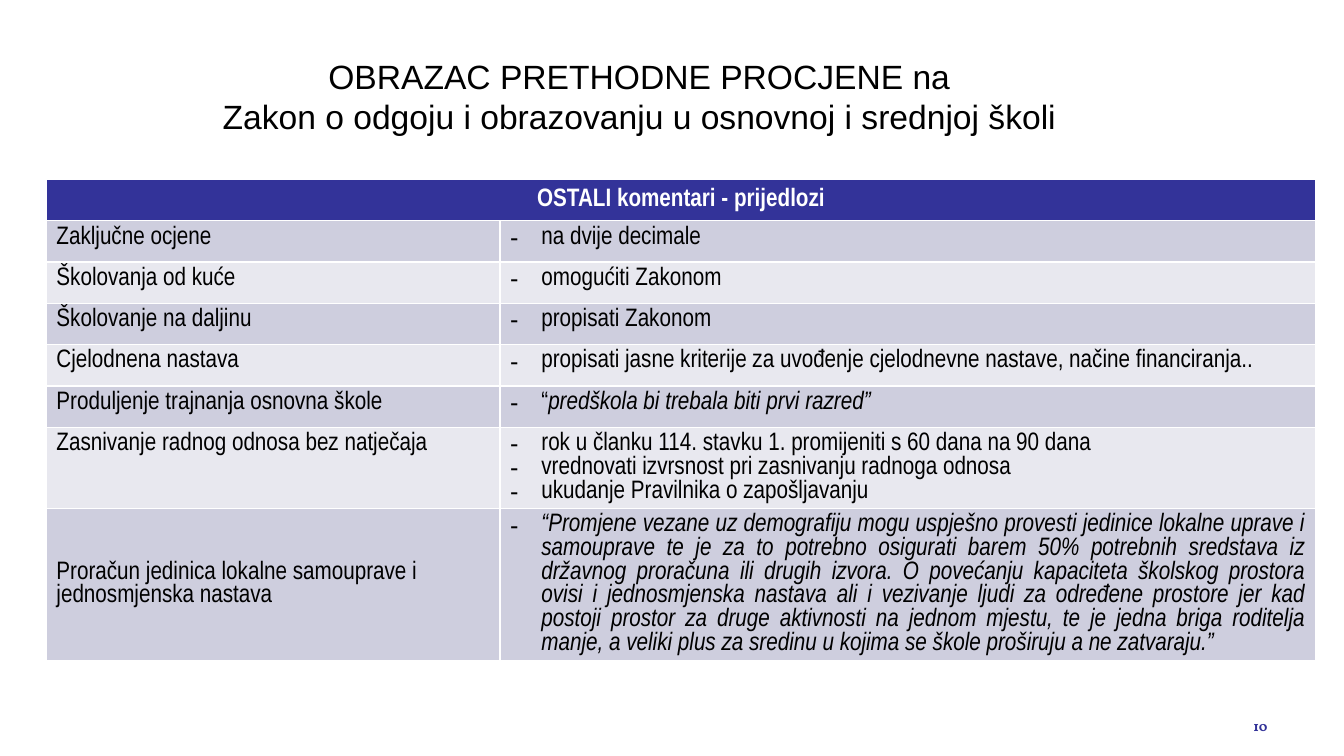
from lxml import etree
from pptx import Presentation
from pptx.dml.color import RGBColor
from pptx.enum import text
from pptx.oxml import ns
from pptx.util import Inches, Pt

BLACK = RGBColor(0x00, 0x00, 0x00)
WHITE = RGBColor(0xFF, 0xFF, 0xFF)
NAVY = RGBColor(0x33, 0x33, 0x99)
BANDS = (RGBColor(0xCE, 0xCE, 0xDE), RGBColor(0xE8, 0xE8, 0xEF))
INDENT = Inches(0.31)
ROW_HEIGHT = Inches(0.41)

TITLE = ("OBRAZAC PRETHODNE PROCJENE na",
         "Zakon o odgoju i obrazovanju u osnovnoj i srednjoj školi")
HEADER = "OSTALI komentari - prijedlozi"
BUDGET_QUOTE = (
    "“Promjene vezane uz demografiju mogu uspješno provesti jedinice lokalne "
    "uprave i samouprave te je za to potrebno osigurati barem 50% potrebnih "
    "sredstava iz državnog proračuna ili drugih izvora. O povećanju kapaciteta "
    "školskog prostora ovisi i jednosmjenska nastava ali i vezivanje ljudi za "
    "određene prostore jer kad postoji prostor za druge aktivnosti na jednom "
    "mjestu, te je jedna briga roditelja manje, a veliki plus za sredinu u "
    "kojima se škole proširuju a ne zatvaraju.”")

# Topic, then its proposals; each proposal is (upright text, italic text)
ROWS = [
    ("Zaključne ocjene", [("na dvije decimale", "")]),
    ("Školovanja od kuće", [("omogućiti Zakonom", "")]),
    ("Školovanje na daljinu", [("propisati Zakonom", "")]),
    ("Cjelodnena nastava",
     [("propisati jasne kriterije za uvođenje cjelodnevne nastave, "
       "načine financiranja..", "")]),
    ("Produljenje trajnanja osnovna škole",
     [("“", "predškola bi trebala biti prvi razred”")]),
    ("Zasnivanje radnog odnosa bez natječaja",
     [("rok u članku 114. stavku 1. promijeniti s 60 dana na 90 dana", ""),
      ("vrednovati izvrsnost pri zasnivanju radnoga odnosa", ""),
      ("ukudanje Pravilnika o zapošljavanju", "")]),
    ("Proračun jedinica lokalne samouprave i jednosmjenska nastava",
     [("", BUDGET_QUOTE)]),
]


def add_run(p, words, size, font, color, bold=False, italic=False):
    r = p.add_run()
    r.text = words
    r.font.size = Pt(size)
    r.font.name = font
    r.font.color.rgb = color
    r.font.bold = bold
    r.font.italic = italic


def add_dash(p):
    pPr = p._p.get_or_add_pPr()
    pPr.set("marL", str(INDENT))
    pPr.set("indent", str(-INDENT))
    etree.SubElement(pPr, ns.qn("a:buFont")).set("typeface", "Arial")
    etree.SubElement(pPr, ns.qn("a:buChar")).set("char", "-")


def fill_cell(cell, fill, items, color=BLACK, bold=False, dashed=False, align=None):
    cell.fill.solid()
    cell.fill.fore_color.rgb = fill
    tf = cell.text_frame
    for i, (upright, slanted) in enumerate(items):
        p = tf.add_paragraph() if i else tf.paragraphs[0]
        p.alignment = align
        if dashed:
            add_dash(p)
        for words, italic in ((upright, False), (slanted, True)):
            if words:
                add_run(p, words, 18, "Arial Narrow", color, bold, italic)


def set_title(s):
    sp = s.shapes.title
    sp.left, sp.top = Inches(0.34), Inches(0.5)
    sp.width, sp.height = Inches(12), Inches(0.87)
    sp.fill.solid()
    sp.fill.fore_color.rgb = WHITE
    tf = sp.text_frame
    tf.auto_size = text.MSO_AUTO_SIZE.NONE
    tf.vertical_anchor = text.MSO_ANCHOR.BOTTOM
    tf.margin_bottom = Inches(0.02)
    p = tf.paragraphs[0]
    p.alignment = text.PP_ALIGN.CENTER
    for i, line in enumerate(TITLE):
        if i:
            p.add_line_break()
        add_run(p, line, 24, "Arial", BLACK)


def add_proposals(s):
    count = len(ROWS) + 1
    table = s.shapes.add_table(count, 2, Inches(0.46), Inches(1.78),
                               Inches(12.59), ROW_HEIGHT * count).table
    table.columns[0].width = Inches(4.5)
    table.columns[1].width = Inches(8.09)
    for row in table.rows:
        row.height = ROW_HEIGHT

    # Header across both columns
    header = table.cell(0, 0)
    header.merge(table.cell(0, 1))
    header.vertical_anchor = text.MSO_ANCHOR.MIDDLE
    fill_cell(header, NAVY, [(HEADER, "")], WHITE, bold=True,
              align=text.PP_ALIGN.CENTER)

    # Topics and proposals
    for i, (topic, proposals) in enumerate(ROWS):
        last = i == len(ROWS) - 1
        band = BANDS[i % 2]
        topic_cell = table.cell(i + 1, 0)
        fill_cell(topic_cell, band, [(topic, "")])
        if last:
            topic_cell.vertical_anchor = text.MSO_ANCHOR.MIDDLE
        fill_cell(table.cell(i + 1, 1), band, proposals, dashed=True,
                  align=text.PP_ALIGN.JUSTIFY if last else None)


def add_page_number(s, number):
    sp = s.shapes.add_textbox(Inches(11.74), Inches(7.06), Inches(0.93), Inches(0.29))
    tf = sp.text_frame
    tf.word_wrap = True
    tf.vertical_anchor = text.MSO_ANCHOR.MIDDLE
    p = tf.paragraphs[0]
    p.alignment = text.PP_ALIGN.RIGHT
    add_run(p, number, 10, "Vollkorn", NAVY, bold=True)


def main():
    prs = Presentation()
    prs.slide_width, prs.slide_height = Inches(13.33), Inches(7.5)
    s = prs.slides.add_slide(prs.slide_layouts[5])
    set_title(s)
    add_proposals(s)
    add_page_number(s, "10")
    prs.save("out.pptx")


if __name__ == "__main__":
    main()
